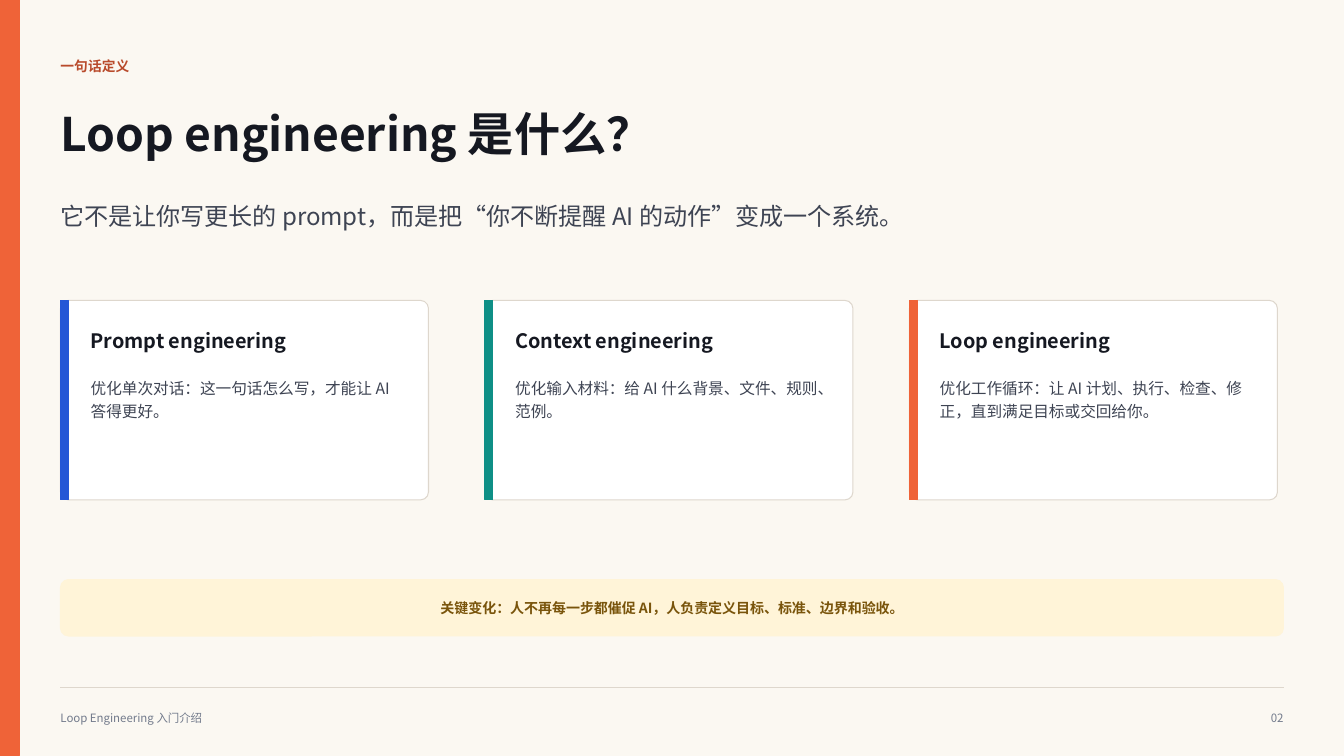
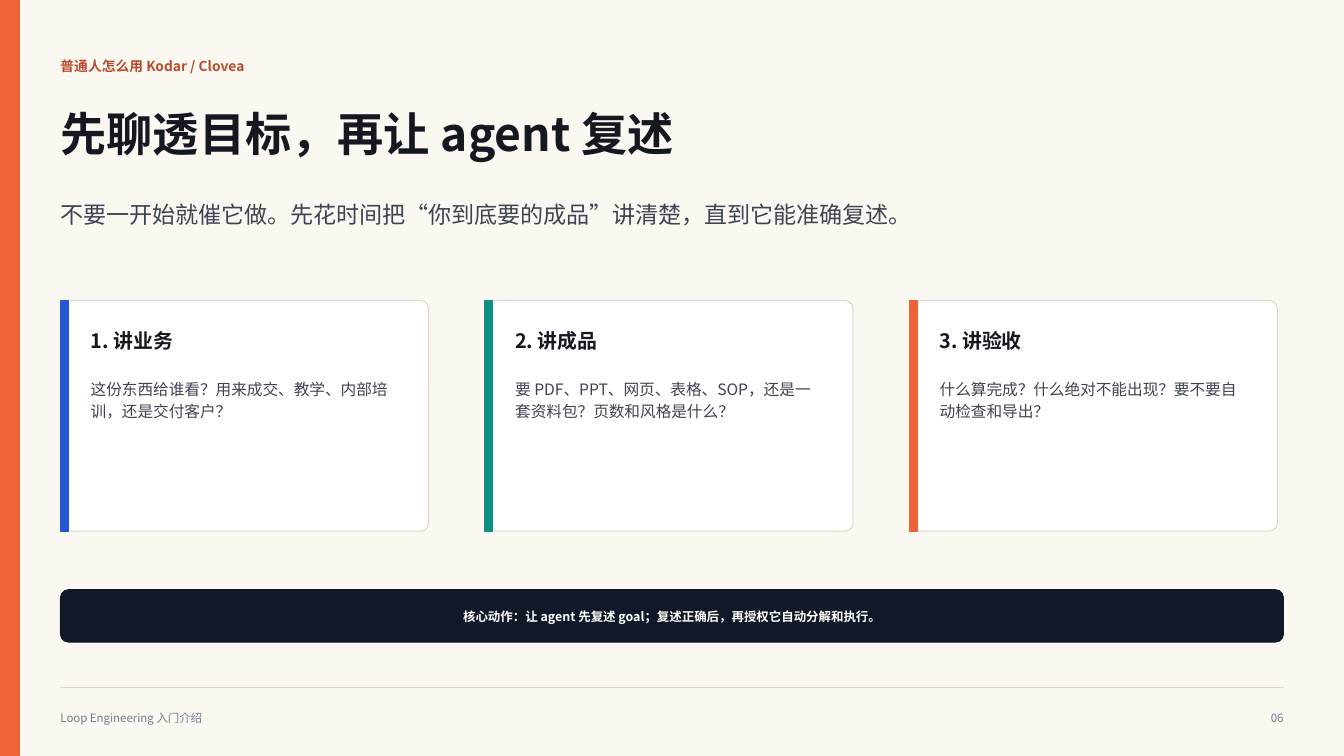
import dataclasses

import pptx
import pptx.dml.color
import pptx.enum.shapes
import pptx.enum.text
import pptx.oxml.ns
import pptx.util
from lxml import etree

Inches = pptx.util.Inches
ALIGN = pptx.enum.text.PP_ALIGN
SHAPE = pptx.enum.shapes.MSO_SHAPE


@dataclasses.dataclass(frozen=True)
class Theme:
    font: str = "Noto Sans CJK SC"
    paper: str = "FBF8F2"
    white: str = "FFFFFF"
    rule: str = "DED7CD"
    ink: str = "151821"
    body: str = "3E4453"
    muted: str = "737B8C"
    rust: str = "B94B2C"
    orange: str = "EF6338"
    blue: str = "2457D6"
    teal: str = "0E8F86"
    cream: str = "FFF4D8"
    brown: str = "79540B"
    navy: str = "111827"
    footer_size: float = 8.2
    kicker_size: float = 9.8
    title_size: float = 33
    heading_size: float = 14.2
    body_size: float = 11.2
    hairline: float = 0.75
    radius: float = 0.08


@dataclasses.dataclass(frozen=True)
class Box:
    left: float
    top: float
    width: float
    height: float

    def place(self):
        return [Inches(v) for v in (self.left, self.top, self.width, self.height)]

    def inner(self, dx, dy, width, height):
        return Box(self.left + dx, self.top + dy, width, height)


THEME = Theme()
PAGE = Box(0, 0, 13.33, 7.5)
CONTENT = Box(0.6, 0.56, 12.13, 6.73)
CARD_WIDTH = 3.65
CARD_STEP = 4.21


def rgb(value):
    return pptx.dml.color.RGBColor.from_string(value)


def add_text(slide, box, text, size, color, spacing, bold=False, align=ALIGN.LEFT):
    frame = slide.shapes.add_textbox(*box.place()).text_frame
    frame.word_wrap = True
    frame.margin_left = frame.margin_top = frame.margin_right = frame.margin_bottom = 0
    paragraph = frame.paragraphs[0]
    paragraph.text = text
    paragraph.alignment = align
    paragraph.line_spacing = spacing
    run = paragraph.runs[0]
    run.font.size = pptx.util.Pt(size)
    run.font.bold = bold
    run.font.color.rgb = rgb(color)
    run.font.name = THEME.font
    east_asian = etree.SubElement(run._r.get_or_add_rPr(), pptx.oxml.ns.qn("a:ea"))
    east_asian.set("typeface", THEME.font)


def add_panel(slide, box, fill, outline=None, rounded=False):
    kind = SHAPE.ROUNDED_RECTANGLE if rounded else SHAPE.RECTANGLE
    panel = slide.shapes.add_shape(kind, *box.place())
    if rounded:
        panel.adjustments[0] = THEME.radius / min(box.width, box.height)
    panel.shadow.inherit = False
    panel.fill.solid()
    panel.fill.fore_color.rgb = rgb(fill)
    panel.line.color.rgb = rgb(outline or fill)
    panel.line.width = pptx.util.Pt(THEME.hairline)


def add_frame(slide, box, page_number):
    slide.background.fill.solid()
    slide.background.fill.fore_color.rgb = rgb(THEME.paper)
    add_panel(slide, PAGE.inner(0, 0, 0.19, PAGE.height), THEME.orange)
    rule_y = Inches(box.top + 6.26)
    rule = slide.shapes.add_connector(
        pptx.enum.shapes.MSO_CONNECTOR.STRAIGHT,
        Inches(box.left), rule_y, Inches(box.left + box.width), rule_y)
    rule.line.color.rgb = rgb(THEME.rule)
    rule.line.width = pptx.util.Pt(THEME.hairline)
    etree.SubElement(rule._element.spPr, pptx.oxml.ns.qn("a:effectLst"))
    add_text(slide, box.inner(0, 6.48, 5.42, 0.25), "Loop Engineering 入门介绍",
             THEME.footer_size, THEME.muted, 1.08)
    add_text(slide, box.inner(box.width - 0.5, 6.48, 0.5, 0.25), page_number,
             THEME.footer_size, THEME.muted, 1.08, align=ALIGN.RIGHT)


def add_heading(slide, box, kicker, title, lead, lead_size):
    add_text(slide, box.inner(0, 0, 8.96, 0.25), kicker,
             THEME.kicker_size, THEME.rust, 1.08, bold=True)
    add_text(slide, box.inner(0, 0.52, 9.38, 0.6), title,
             THEME.title_size, THEME.ink, 0.96, bold=True)
    add_text(slide, box.inner(0, 1.4, 9.79, 0.46), lead, lead_size, THEME.body, 1.12)


def add_card(slide, box, accent, heading, body):
    add_panel(slide, box, THEME.white, THEME.rule, rounded=True)
    add_panel(slide, box.inner(0, 0, 0.08, box.height), accent)
    add_text(slide, box.inner(0.3, 0.25, 3.15, 0.29), heading,
             THEME.heading_size, THEME.ink, 1.12, bold=True)
    add_text(slide, box.inner(0.3, 0.75, 3.06, box.height - 0.88), body,
             THEME.body_size, THEME.body, 1.18)


def add_banner(slide, box, text, size, fill, color):
    add_panel(slide, box, fill, rounded=True)
    inset = 0.28
    text_height = size * 0.02
    add_text(slide, box.inner(inset, (box.height - text_height) / 2,
                              box.width - 2 * inset, text_height),
             text, size, color, 1.12, bold=True, align=ALIGN.CENTER)


def add_cards_slide(deck, page_number, heading, cards, card_height,
                    banner_top, banner_height, banner):
    slide = deck.slides.add_slide(deck.slide_layouts[6])
    add_frame(slide, CONTENT, page_number)
    add_heading(slide, CONTENT, *heading)
    accents = (THEME.blue, THEME.teal, THEME.orange)
    for index, (accent, card) in enumerate(zip(accents, cards)):
        box = CONTENT.inner(index * CARD_STEP, 2.42, CARD_WIDTH, card_height)
        add_card(slide, box, accent, *card)
    add_banner(slide, Box(CONTENT.left, banner_top, CONTENT.width, banner_height), *banner)


def main():
    deck = pptx.Presentation()
    deck.slide_width = Inches(PAGE.width)
    deck.slide_height = Inches(PAGE.height)
    add_cards_slide(
        deck, "02",
        heading=("一句话定义", "Loop engineering 是什么？",
                 "它不是让你写更长的 prompt，而是把“你不断提醒 AI 的动作”变成一个系统。", 17.2),
        cards=[
            ("Prompt engineering", "优化单次对话：这一句话怎么写，才能让 AI 答得更好。"),
            ("Context engineering", "优化输入材料：给 AI 什么背景、文件、规则、范例。"),
            ("Loop engineering", "优化工作循环：让 AI 计划、执行、检查、修正，直到满足目标或交回给你。"),
        ],
        card_height=1.98, banner_top=5.75, banner_height=0.56,
        banner=("关键变化：人不再每一步都催促 AI，人负责定义目标、标准、边界和验收。",
                10, THEME.cream, THEME.brown))
    add_cards_slide(
        deck, "06",
        heading=("普通人怎么用 Kodar / Clovea", "先聊透目标，再让 agent 复述",
                 "不要一开始就催它做。先花时间把“你到底要的成品”讲清楚，直到它能准确复述。", 16.5),
        cards=[
            ("1. 讲业务", "这份东西给谁看？用来成交、教学、内部培训，还是交付客户？"),
            ("2. 讲成品", "要 PDF、PPT、网页、表格、SOP，还是一套资料包？页数和风格是什么？"),
            ("3. 讲验收", "什么算完成？什么绝对不能出现？要不要自动检查和导出？"),
        ],
        card_height=2.29, banner_top=5.85, banner_height=0.52,
        banner=("核心动作：让 agent 先复述 goal；复述正确后，再授权它自动分解和执行。",
                8.9, THEME.navy, THEME.white))
    deck.save("out.pptx")


if __name__ == "__main__":
    main()
